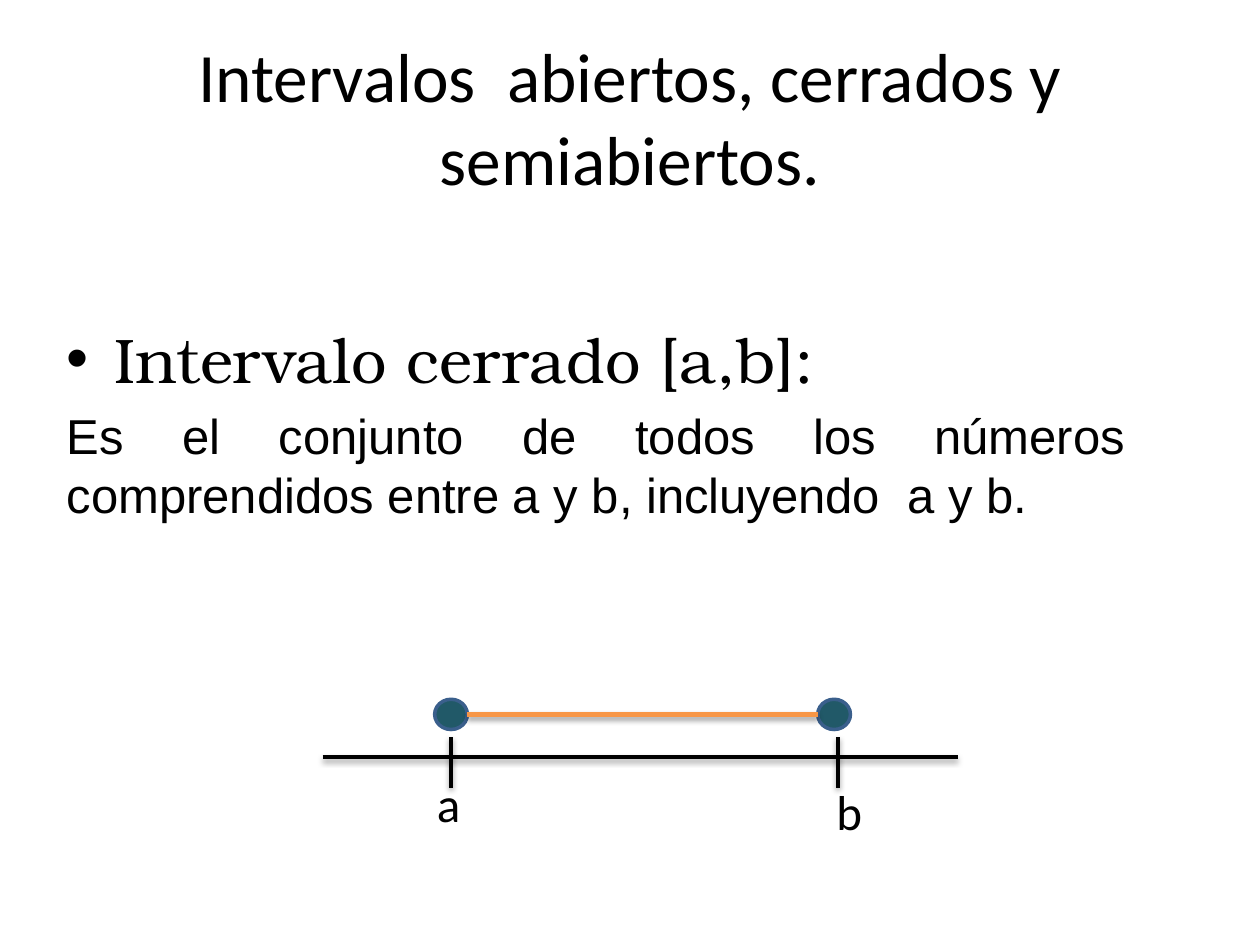
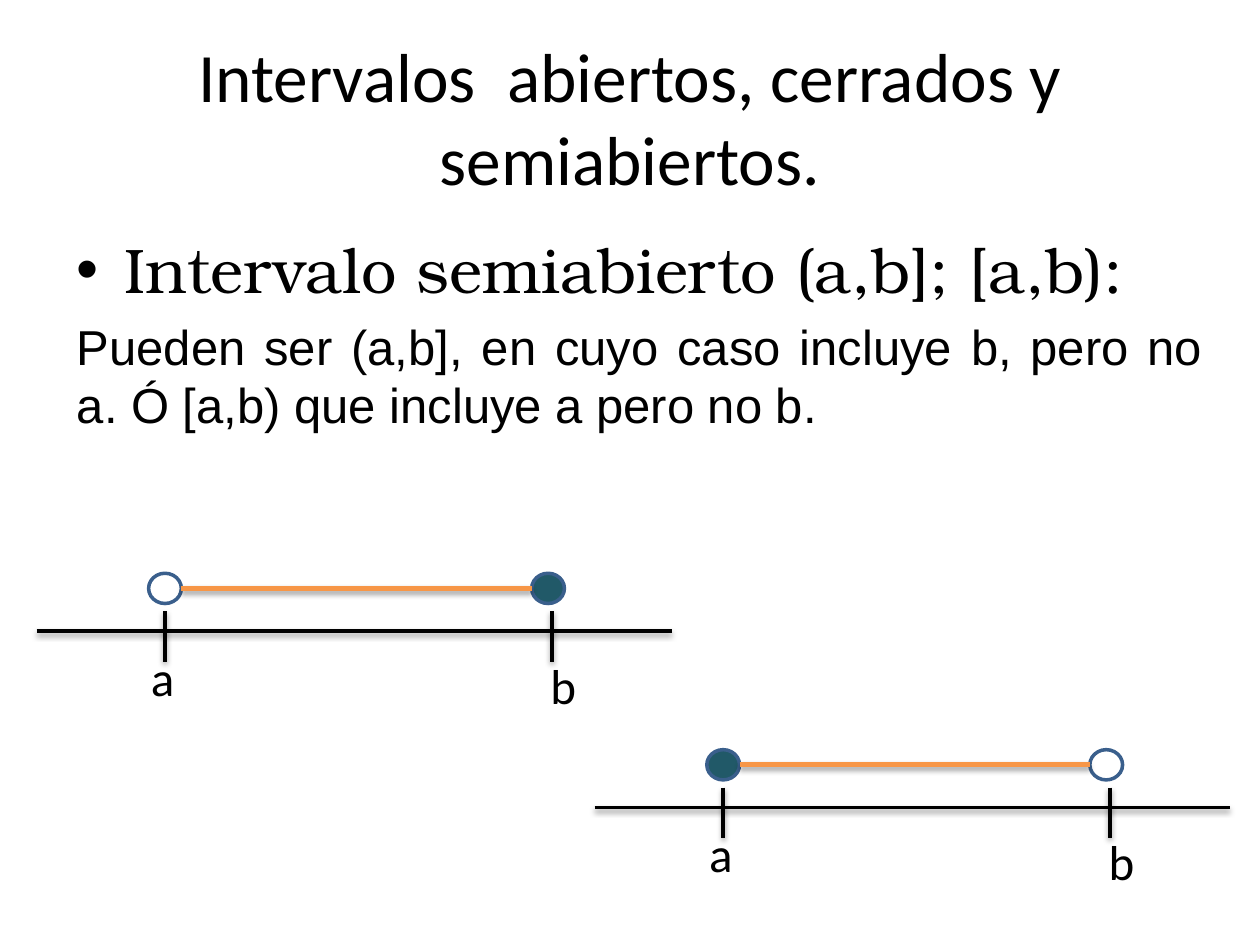
"""Build two slides on closed and half-open intervals."""
from lxml import etree
from pptx import Presentation
from pptx.dml.color import RGBColor
from pptx.enum import shapes, text
from pptx.oxml import ns
from pptx.util import Inches, Pt

BLACK, TEAL, BLUE, ORANGE = "000000", "215968", "3A5F8C", "F79646"
TITLE = "Intervalos  abiertos, cerrados y semiabiertos."
TICKS = (1.02, 4.09)
DOTS = (0.89, 3.93)
LABELS = (("a", 0.81, 0.08), ("b", 3.98, 0.14))
DOT_W, DOT_H, DOT_TOP = 0.26, 0.24, -0.46


def color(code):
    return RGBColor.from_string(code)


def place(shape, left, top, width, height):
    shape.left, shape.top = Inches(left), Inches(top)
    shape.width, shape.height = Inches(width), Inches(height)


def style(para, face, size):
    for run in para.runs:
        run.font.name = face
        run.font.size = Pt(size)
        run.font.color.rgb = color(BLACK)


def shade(line, alpha, dist):
    effects = etree.SubElement(line._element.spPr, ns.qn("a:effectLst"))
    shadow = etree.SubElement(
        effects, ns.qn("a:outerShdw"), blurRad=str(Pt(3.1)), dist=str(Pt(dist)),
        dir="5400000", rotWithShape="0")
    tint = etree.SubElement(shadow, ns.qn("a:srgbClr"), val=BLACK)
    etree.SubElement(tint, ns.qn("a:alpha"), val=str(alpha * 1000))


def add_line(group, start, end, code=BLACK, width=2, alpha=38, dist=1.6):
    line = group.shapes.add_connector(
        shapes.MSO_CONNECTOR.STRAIGHT, *map(Inches, start + end))
    line.line.color.rgb = color(code)
    line.line.width = Pt(width)
    shade(line, alpha, dist)


def add_dot(group, left, top, closed):
    dot = group.shapes.add_shape(
        shapes.MSO_SHAPE.OVAL, *map(Inches, (left, top, DOT_W, DOT_H)))
    dot.shadow.inherit = False
    if closed:
        dot.fill.solid()
        dot.fill.fore_color.rgb = color(TEAL)
    else:
        dot.fill.background()
    dot.line.color.rgb = color(BLUE)
    dot.line.width = Pt(2)


def add_label(group, name, left, top):
    box = group.shapes.add_textbox(*map(Inches, (left, top, 0.43, 0.57)))
    frame = box.text_frame
    frame.word_wrap = True
    frame.auto_size = text.MSO_AUTO_SIZE.SHAPE_TO_FIT_TEXT
    frame.text = name
    style(frame.paragraphs[0], "Calibri", 28)


def add_axis(slide, x, y, closed):
    group = slide.shapes.add_group_shape()
    add_line(group, (x, y), (x + 5.04, y))
    for tick in TICKS:
        add_line(group, (x + tick, y - 0.16), (x + tick, y + 0.24))
    for name, left, drop in LABELS:
        add_label(group, name, x + left, y + drop)
    for left, full in zip(DOTS, closed):
        add_dot(group, x + left, y + DOT_TOP, full)
    mid = y + DOT_TOP + DOT_H / 2
    add_line(group, (x + DOTS[0] + DOT_W, mid), (x + DOTS[1], mid),
             ORANGE, 3, 35, 1.8)


def add_title(slide):
    title = slide.shapes.title
    place(title, 0.5, 0.3, 9, 1.25)
    frame = title.text_frame
    frame.text = TITLE
    frame.auto_size = text.MSO_AUTO_SIZE.NONE
    frame.vertical_anchor = text.MSO_ANCHOR.MIDDLE
    para = frame.paragraphs[0]
    para.alignment = text.PP_ALIGN.CENTER
    style(para, "Calibri", 39.6)


def add_body(slide, spot, term, meaning):
    body = slide.placeholders[1]
    place(body, *spot)
    frame = body.text_frame
    frame.auto_size = text.MSO_AUTO_SIZE.NONE
    frame.text = term
    head, note = frame.paragraphs[0], frame.add_paragraph()
    note.text = meaning
    head.space_before = Pt(0)
    props = note._p.get_or_add_pPr()
    props.set("marL", "0")
    props.set("indent", "0")
    etree.SubElement(props, ns.qn("a:buNone"))
    for para, face, size in ((head, "TeX Gyre Bonum", 36), (note, "Arial", 28)):
        para.alignment = text.PP_ALIGN.JUSTIFY
        style(para, face, size)


def add_slide(deck, spot, term, meaning, axes):
    slide = deck.slides.add_slide(deck.slide_layouts[1])
    add_title(slide)
    add_body(slide, spot, term, meaning)
    for x, y, closed in axes:
        add_axis(slide, x, y, closed)


def main():
    deck = Presentation()
    deck.slide_width, deck.slide_height = Inches(10), Inches(7.5)
    add_slide(
        deck, (0.43, 2.49, 9.06, 2.2), "Intervalo cerrado [a,b]:",
        "Es el conjunto de todos los números  comprendidos entre a y b, "
        "incluyendo  a y b.",
        [(2.56, 6.01, (True, True))])
    add_slide(
        deck, (0.51, 1.78, 9.13, 2.2), "Intervalo semiabierto (a,b]; [a,b):",
        "Pueden ser (a,b], en cuyo caso incluye b, pero no a. "
        "Ó [a,b) que incluye a pero no b.",
        [(0.29, 5.01, (False, True)), (4.72, 6.41, (True, False))])
    deck.save("out.pptx")


if __name__ == "__main__":
    main()
